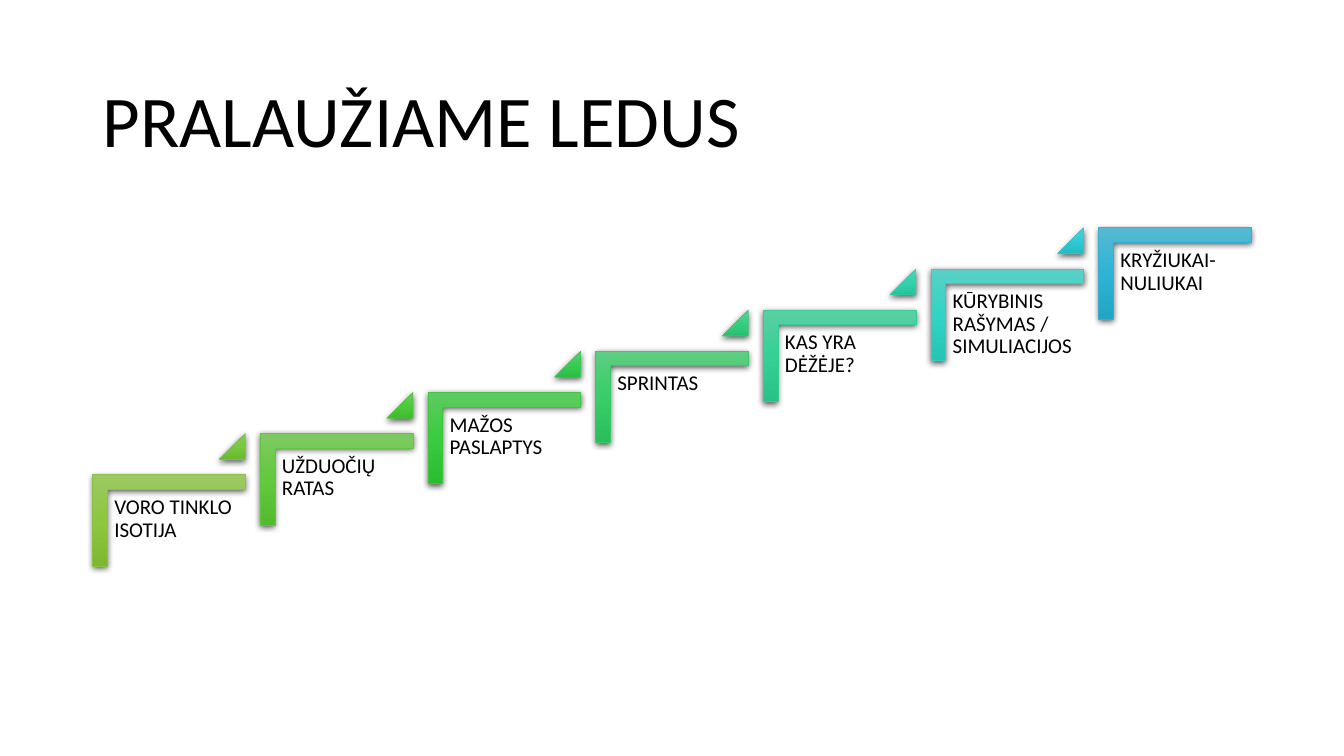
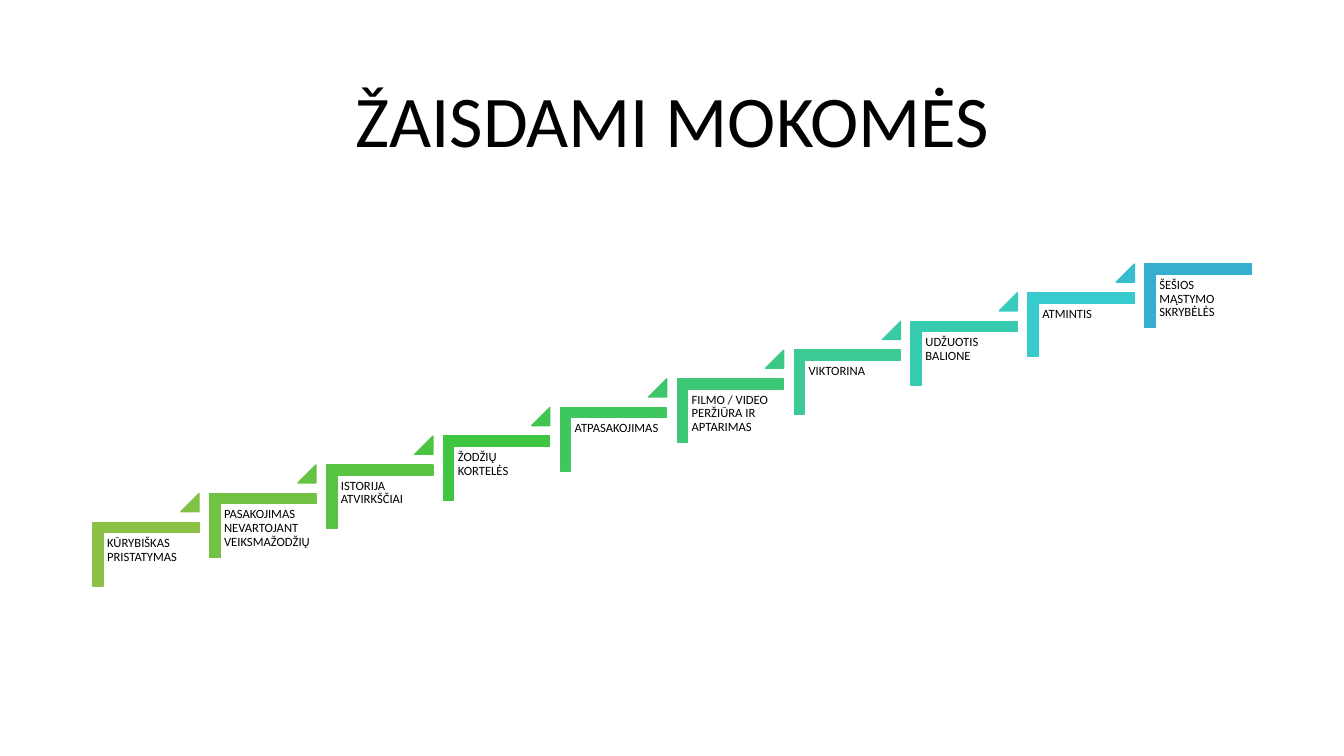
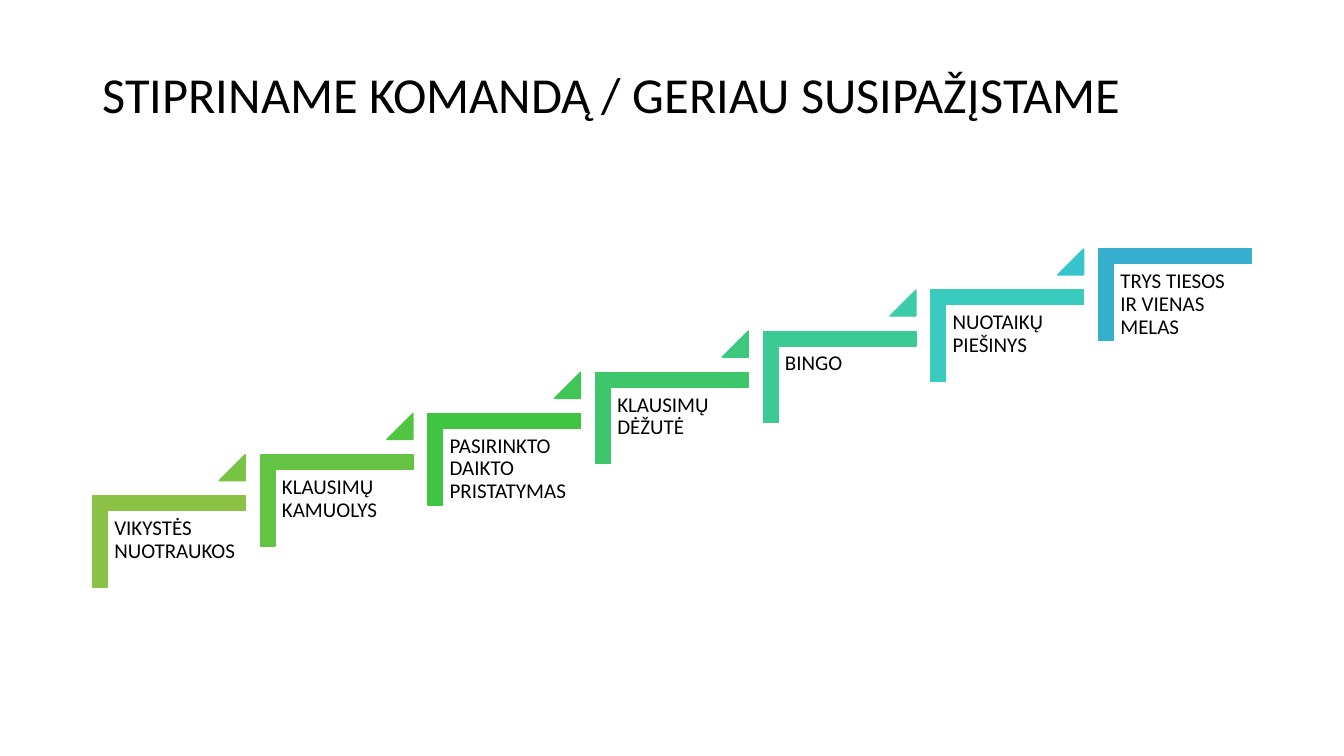
from colorsys import hls_to_rgb, rgb_to_hls

from lxml import etree
from pptx import Presentation
from pptx.dml.color import RGBColor
from pptx.enum.shapes import MSO_SHAPE as Shape
from pptx.enum.text import MSO_ANCHOR as Anchor, PP_ALIGN as Align
from pptx.oxml import parse_xml
from pptx.oxml.ns import nsdecls, qn
from pptx.util import Emu, Pt

PX = 9144  # EMU in one px, 100 px to the inch
FONT = "Calibri"
BLACK = RGBColor(0x00, 0x00, 0x00)
GREEN = RGBColor(0x8B, 0xC1, 0x45)
BLUE = RGBColor(0x36, 0xAF, 0xCE)

TITLE_BOX = (92, 61, 1150, 124)
STAIRS_LEFT, STAIRS_WIDTH = 92, 1149

# Proportions of a stair, as shares of the step width
PITCH = 1.10
STEP_HEIGHT = 0.6
RISE = 0.27
TRIANGLE = 0.17
LABEL_OFFSET = 0.1
LABEL_HEIGHT = 0.79
THICKNESS = 0.16

# Gradient stops: position, lightness factor, saturation factor
GLOSS = [(0, 1.14, 0.96), (50, 1, 1.1), (100, 0.89, 1.16)]

SLIDES = [
    dict(title="PRALAUŽIAME LEDUS", top=226, glossy=True, steps=[
        "VORO TINKLO ISOTIJA", "UŽDUOČIŲ RATAS", "MAŽOS PASLAPTYS", "SPRINTAS",
        "KAS YRA DĖŽĖJE?", "KŪRYBINIS RAŠYMAS / SIMULIACIJOS",
        "KRYŽIUKAI-NULIUKAI"]),
    dict(title="ŽAISDAMI MOKOMĖS", align=Align.CENTER, top=262, label_size=9, steps=[
        "KŪRYBIŠKAS PRISTATYMAS", "PASAKOJIMAS NEVARTOJANT VEIKSMAŽODŽIŲ",
        "ISTORIJA ATVIRKŠČIAI", "ŽODŽIŲ KORTELĖS", "ATPASAKOJIMAS",
        "FILMO / VIDEO PERŽIŪRA IR APTARIMAS", "VIKTORINA", "UDŽUOTIS BALIONE",
        "ATMINTIS", "ŠEŠIOS MĄSTYMO SKRYBĖLĖS"]),
    dict(title="STIPRINAME KOMANDĄ / GERIAU SUSIPAŽĮSTAME", title_size=36,
         title_box=(92, 61, 1150, 70), top=247, steps=[
             "VIKYSTĖS NUOTRAUKOS", "KLAUSIMŲ KAMUOLYS",
             "PASIRINKTO DAIKTO PRISTATYMAS", "KLAUSIMŲ DĖŽUTĖ", "BINGO",
             "NUOTAIKŲ PIEŠINYS", "TRYS TIESOS IR VIENAS MELAS"]),
]


def emu(*lengths):
    return [Emu(round(length * PX)) for length in lengths]


# Colours
def to_hls(color):
    return rgb_to_hls(*(channel / 255 for channel in color))


def to_color(hue, light, saturation):
    return RGBColor(*(round(c * 255) for c in hls_to_rgb(hue, light, saturation)))


def ramp(share):
    """Colour between GREEN and BLUE, going round the colour wheel."""
    return to_color(*(a + (b - a) * share for a, b in zip(to_hls(GREEN), to_hls(BLUE))))


def add_gloss(shape, color):
    """Three-stop vertical gradient with a soft shadow."""
    hue, light, saturation = to_hls(color)
    stops = "".join(
        f'<a:gs pos="{place * 1000}"><a:srgbClr val='
        f'"{to_color(hue, light * brighter, saturation * richer)}"/></a:gs>'
        for place, brighter, richer in GLOSS)
    gradient = parse_xml(
        f'<a:gradFill {nsdecls("a")} rotWithShape="0"><a:gsLst>{stops}</a:gsLst>'
        '<a:lin ang="5400000" scaled="0"/></a:gradFill>')
    properties = shape.fill._xPr
    properties.replace(properties.find(qn("a:solidFill")), gradient)
    shadow = etree.SubElement(
        properties.find(qn("a:effectLst")), qn("a:outerShdw"),
        blurRad=str(Pt(4.5)), dist=str(Pt(1.5)), dir="5400000", rotWithShape="0")
    black = etree.SubElement(shadow, qn("a:srgbClr"), val=str(BLACK))
    etree.SubElement(black, qn("a:alpha"), val="63000")


# Parts
def add_text(page, box, text, size, align=Align.LEFT, anchor=Anchor.TOP, inset=None):
    frame = page.shapes.add_textbox(*emu(*box)).text_frame
    frame.word_wrap = True
    frame.vertical_anchor = anchor
    if inset is not None:
        frame.margin_left = frame.margin_right = inset
        frame.margin_top = frame.margin_bottom = inset
    frame.text = text
    para = frame.paragraphs[0]
    para.alignment = align
    para.line_spacing = 0.9
    font = para.runs[0].font
    font.name, font.size, font.color.rgb = FONT, Pt(size), BLACK


def add_piece(page, kind, box, color, glossy):
    shape = page.shapes.add_shape(kind, *emu(*box))
    shape.shadow.inherit = False
    shape.fill.solid()
    shape.fill.fore_color.rgb = color
    shape.line.color.rgb = color
    shape.line.width = Pt(0.5 if glossy else 1)
    if glossy:
        add_gloss(shape, color)
    return shape


def add_corner(page, box, color, glossy):
    """Corner shape turned a quarter, so that it fills the box once turned."""
    left, top, width, height = box
    shift = (width - height) / 2
    corner = add_piece(page, Shape.CORNER, (left + shift, top - shift, height, width),
                       color, glossy)
    corner.rotation = 90
    corner.adjustments[0] = corner.adjustments[1] = THICKNESS


def add_stairs(page, left, top, width, labels, label_size, glossy):
    last = len(labels) - 1
    step = width / (1 + PITCH * last)
    side = step * TRIANGLE
    for index, label in enumerate(labels):
        x = left + index * PITCH * step
        y = top + (last - index) * RISE * step
        add_corner(page, (x, y, step, step * STEP_HEIGHT), ramp(index / last), glossy)
        offset = step * LABEL_OFFSET
        add_text(page, (x + offset, y + offset, step - offset, step * LABEL_HEIGHT),
                 label, label_size, inset=Pt(label_size * 0.3))
        if index < last:
            triangle = add_piece(
                page, Shape.ISOSCELES_TRIANGLE,
                (x + step - side, y - RISE * step, side, side),
                ramp((index + 0.5) / last), glossy)
            triangle.adjustments[0] = 1


def add_stairs_slide(deck, title, top, steps, title_size=52, title_box=TITLE_BOX,
                     align=Align.LEFT, label_size=15, glossy=False):
    page = deck.slides.add_slide(deck.slide_layouts[6])
    add_text(page, title_box, title, title_size, align, Anchor.MIDDLE)
    add_stairs(page, STAIRS_LEFT, top, STAIRS_WIDTH, steps, label_size, glossy)


def main():
    deck = Presentation()
    deck.slide_width, deck.slide_height = emu(1333, 750)
    for content in SLIDES:
        add_stairs_slide(deck, **content)
    deck.save("out.pptx")


if __name__ == "__main__":
    main()
